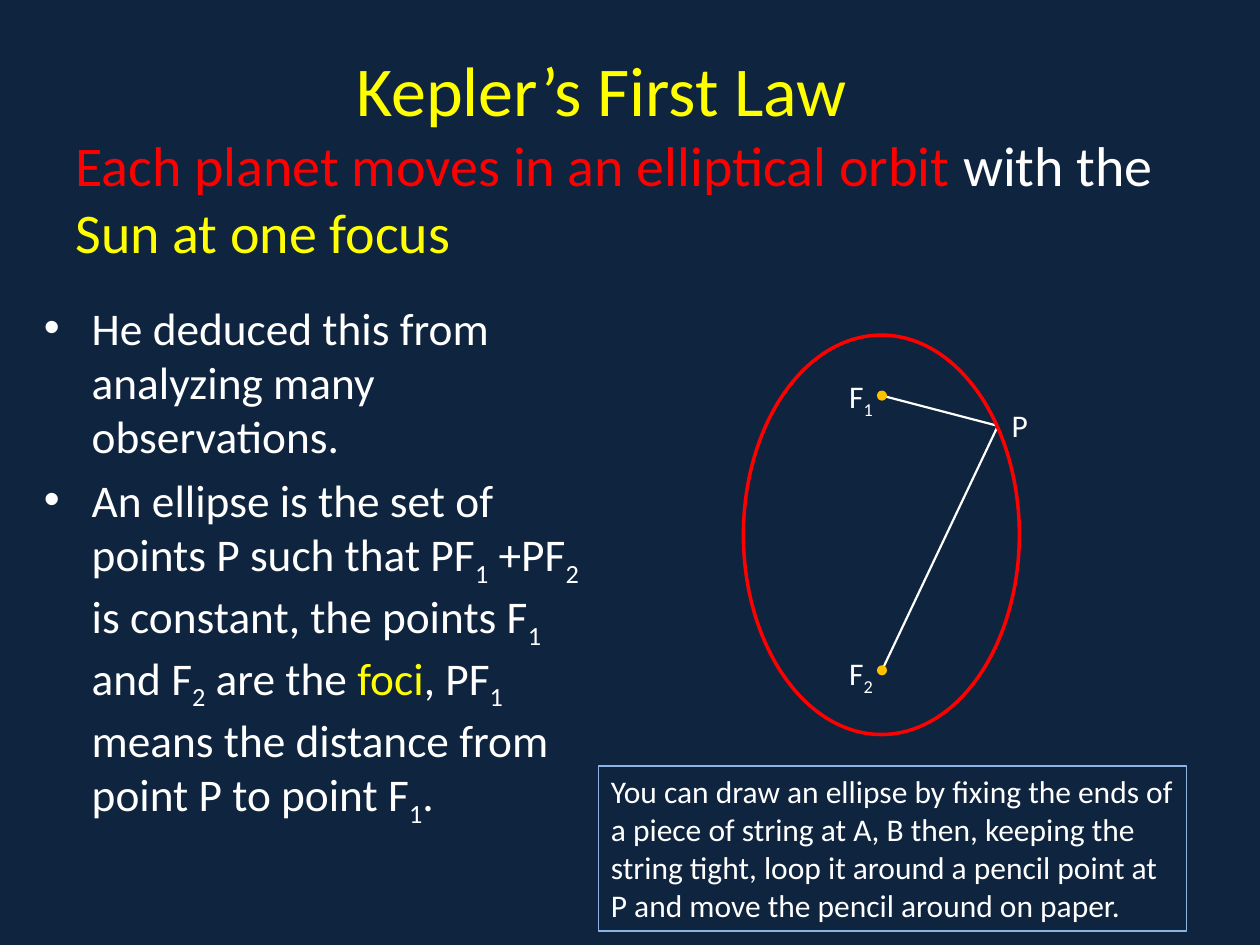
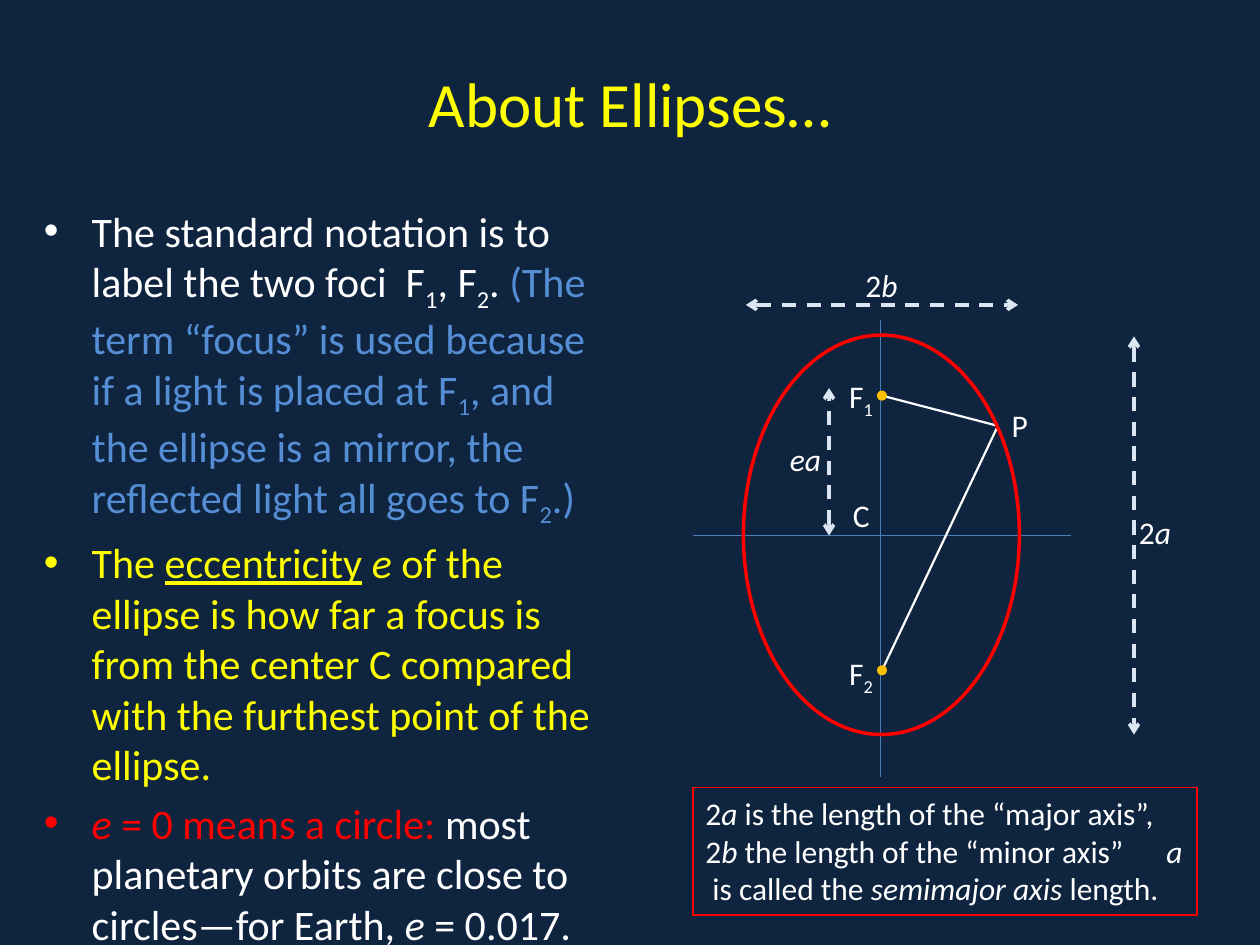
from lxml.etree import SubElement
from pptx import Presentation
from pptx.dml.color import RGBColor
from pptx.enum.dml import MSO_LINE
from pptx.enum.shapes import MSO_CONNECTOR as Connector, MSO_SHAPE as Shape
from pptx.enum.text import MSO_ANCHOR as Anchor, PP_ALIGN as Align
from pptx.oxml.ns import qn
from pptx.util import Inches, Pt

NAVY, WHITE, YELLOW, RED, GOLD = "0F243E", "FFFFFF", "FFFF00", "FF0000", "FFC000"
SKY, AXIS_BLUE, PALE, FRAME_BLUE = "558ED5", "4B7EBC", "DCE6F2", "8EB4E3"
FONT = "Calibri"
ITALIC = {"italic": True}
UNDERLINED = {"underline": True}
LABEL_SIZE = 18
LABEL_BOX = (0.58, 0.42)

ORBIT = (5.9, 2.66, 2.19, 3.17)
FOCI = [(7, 3.14), (7, 5.32)]
POINT_P = (7.92, 3.38)
DOT = 0.08
POINT_LABELS = [("P", (7.93, 3.17)), ("F_1", (6.64, 2.94)), ("F_2", (6.64, 5.14))]

LAW = {
    "title": ((0.5, 0.3, 9, 1.87), [
        {"size": 40, "indent": 2.23, "runs": [("Kepler’s First Law", YELLOW)]},
        {"size": 32, "runs": [
            ("Each planet moves in an elliptical orbit ", RED),
            ("with the ", WHITE),
            ("Sun at one focus", YELLOW)]},
    ]),
    "points": ((0.25, 2.33, 4.67, 4.37), 25.9, [
        [("He deduced this from analyzing many observations.", WHITE)],
        [("An ellipse is the set of points P such that PF_1 +PF_2 is constant, "
          "the points F_1 and F_2 are the ", WHITE),
         ("foci", YELLOW),
         (", PF_1 means the distance from point P to point F_1.", WHITE)],
    ]),
    "note": ((4.75, 6.08, 4.67, 1.31), FRAME_BLUE, 0.75, [
        ("You can draw an ellipse by fixing the ends of a piece of string at A, B "
         "then, keeping the string tight, loop it around a pencil point at P and "
         "move the pencil around on paper.", WHITE)]),
    "axes": [],
    "spans": [],
    "labels": [],
}

ELLIPSES = {
    "title": ((0.5, 0.3, 9, 1.03), [
        {"size": 36, "align": Align.CENTER, "runs": [("About Ellipses…", YELLOW)]},
    ]),
    "points": ((0.25, 1.58, 4.67, 5.67), 24, [
        [("The standard notation is to label the two foci  F_1, F_2. ", WHITE),
         ("(The term “focus” is used because if a light is placed at F_1, and the "
          "ellipse is a mirror, the reflected light all goes to F_2.)", SKY)],
        [("The ", YELLOW),
         ("eccentricity", YELLOW, UNDERLINED),
         (" ", YELLOW),
         ("e", YELLOW, ITALIC),
         (" of the ellipse is how far a focus is from the center C compared with "
          "the furthest point of the ellipse.", YELLOW)],
        [("e", RED, ITALIC),
         (" = 0 means a circle: ", RED),
         ("most planetary orbits are close to circles—for Earth, ", WHITE),
         ("e", WHITE, ITALIC),
         (" = 0.017.", WHITE)],
    ]),
    "note": ((5.5, 6.25, 4, 1.01), RED, 1, [
        ("2", WHITE), ("a", WHITE, ITALIC),
        (" is the length of the “major axis”, 2", WHITE), ("b", WHITE, ITALIC),
        (" the length of the “minor axis”\t", WHITE), ("a ", WHITE, ITALIC),
        (" is called the ", WHITE), ("semimajor axis ", WHITE, ITALIC),
        ("length.", WHITE)]),
    "axes": [((6.99, 2.54), (6.99, 6.17)), ((5.5, 4.25), (8.5, 4.25))],
    "spans": [((9, 2.67), (9, 5.83)), ((5.92, 2.42), (8.08, 2.42)),
              ((6.58, 4.25), (6.58, 3.08))],
    "labels": [
        ([("C", WHITE)], (6.67, 3.89)),
        ([("2", WHITE), ("a", WHITE, ITALIC)], (8.94, 4.02)),
        ([("2", WHITE), ("b", WHITE, ITALIC)], (6.77, 2.06)),
        ([("ea", WHITE, ITALIC)], (6.17, 3.44)),
    ],
}
NOTE_TAB = 3.66


def color(hex_code):
    return RGBColor.from_string(hex_code)


def inches(values):
    return [Inches(value) for value in values]


def write_runs(paragraph, runs, size):
    for text, hue, *styles in runs:
        first, *rest = text.split("_")
        pieces = [(first, False)]
        for part in rest:
            pieces += [(part[0], True), (part[1:], False)]
        for piece, subscript in pieces:
            if not piece:
                continue
            run = paragraph.add_run()
            run.text = piece
            run.font.color.rgb = color(hue)
            formats = {"name": FONT, "size": Pt(size)}
            for style in styles:
                formats.update(style)
            for name, value in formats.items():
                setattr(run.font, name, value)
            if subscript:
                run._r.get_or_add_rPr().set("baseline", "-25000")


def text_box(slide, place, anchor=Anchor.TOP):
    frame = slide.shapes.add_textbox(*inches(place)).text_frame
    frame.word_wrap = True
    frame.vertical_anchor = anchor
    return frame


def paragraphs(frame, items):
    for index, item in enumerate(items):
        yield (frame.add_paragraph() if index else frame.paragraphs[0]), item


def add_title(slide, place, lines):
    frame = text_box(slide, place, Anchor.MIDDLE)
    for paragraph, line in paragraphs(frame, lines):
        paragraph.alignment = line.get("align", Align.LEFT)
        if "indent" in line:
            paragraph._p.get_or_add_pPr().set("marL", str(Inches(line["indent"])))
        write_runs(paragraph, line["runs"], line["size"])


def add_points(slide, place, size, points):
    frame = text_box(slide, place)
    for paragraph, runs in paragraphs(frame, points):
        paragraph.space_before = Pt(round(size * 0.2, 1))
        properties = paragraph._p.get_or_add_pPr()
        properties.set("marL", str(Inches(0.38)))
        properties.set("indent", str(Inches(-0.38)))
        SubElement(properties, qn("a:buFont")).set("typeface", "Arial")
        SubElement(properties, qn("a:buChar")).set("char", "•")
        write_runs(paragraph, runs, size)


def add_label(slide, runs, corner):
    frame = text_box(slide, (*corner, *LABEL_BOX))
    write_runs(frame.paragraphs[0], runs, LABEL_SIZE)


def add_outline(slide, kind, place, hue, width):
    outline = slide.shapes.add_shape(kind, *inches(place))
    outline.shadow.inherit = False
    outline.fill.background()
    outline.line.color.rgb = color(hue)
    outline.line.width = Pt(width)
    return outline


def add_note(slide, place, hue, width, runs):
    frame = add_outline(slide, Shape.RECTANGLE, place, hue, width).text_frame
    frame.word_wrap = True
    frame.vertical_anchor = Anchor.TOP
    paragraph = frame.paragraphs[0]
    paragraph.alignment = Align.LEFT
    if any("\t" in run[0] for run in runs):
        stops = SubElement(paragraph._p.get_or_add_pPr(), qn("a:tabLst"))
        SubElement(stops, qn("a:tab"), pos=str(Inches(NOTE_TAB)), algn="l")
    write_runs(paragraph, runs, LABEL_SIZE)


def add_line(slide, start, end, hue, width, measure=False):
    line = slide.shapes.add_connector(Connector.STRAIGHT, *inches((*start, *end)))
    line.line.color.rgb = color(hue)
    line.line.width = Pt(width)
    if measure:
        line.line.dash_style = MSO_LINE.DASH
        for tip in ("a:headEnd", "a:tailEnd"):
            SubElement(line.line._get_or_add_ln(), qn(tip)).set("type", "arrow")
    SubElement(line._element.spPr, qn("a:effectLst"))


def add_diagram(slide, axes, spans, labels):
    for start, end in axes:
        add_line(slide, start, end, AXIS_BLUE, 0.75)
    for focus in FOCI:
        add_line(slide, focus, POINT_P, WHITE, 1.25)
    add_outline(slide, Shape.OVAL, ORBIT, RED, 2)
    for x, y in FOCI:
        dot = slide.shapes.add_shape(
            Shape.OVAL, *inches((x - DOT / 2, y - DOT / 2, DOT, DOT)))
        dot.shadow.inherit = False
        dot.fill.solid()
        dot.fill.fore_color.rgb = color(GOLD)
        dot.line.fill.background()
    for start, end in spans:
        add_line(slide, start, end, PALE, 2, measure=True)
    for name, corner in POINT_LABELS:
        add_label(slide, [(name, WHITE)], corner)
    for runs, corner in labels:
        add_label(slide, runs, corner)


def main():
    deck = Presentation()
    deck.slide_width, deck.slide_height = inches((10, 7.5))
    for content in (LAW, ELLIPSES):
        slide = deck.slides.add_slide(deck.slide_layouts[6])
        slide.background.fill.solid()
        slide.background.fill.fore_color.rgb = color(NAVY)
        add_title(slide, *content["title"])
        add_points(slide, *content["points"])
        add_diagram(slide, content["axes"], content["spans"], content["labels"])
        add_note(slide, *content["note"])
    deck.save("out.pptx")


if __name__ == "__main__":
    main()
